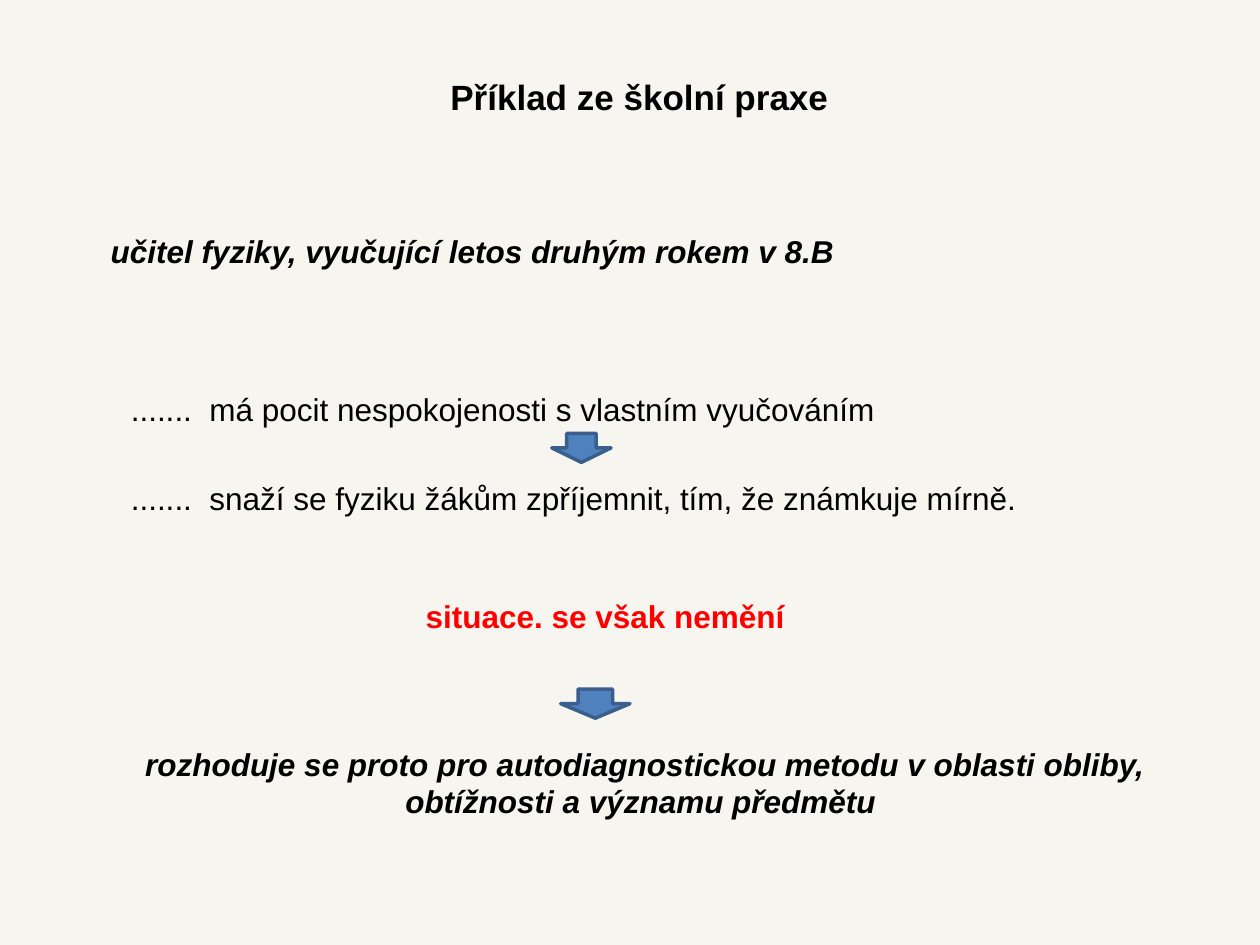
from dataclasses import dataclass

from pptx import Presentation
from pptx.dml.color import RGBColor
from pptx.enum.shapes import MSO_SHAPE
from pptx.enum.text import MSO_ANCHOR, PP_ALIGN
from pptx.util import Inches, Pt

DOWN_ARROW = MSO_SHAPE.DOWN_ARROW
TOP = MSO_ANCHOR.TOP
LEFT, CENTER = PP_ALIGN.LEFT, PP_ALIGN.CENTER
TITLE_ONLY = 5


@dataclass(frozen=True)
class Theme:
    font: str = "Arial"
    title_size: int = 20
    body_size: int = 18
    outline_width: int = 2
    background: RGBColor = RGBColor.from_string("F6F5EF")
    text: RGBColor = RGBColor.from_string("000000")
    warning: RGBColor = RGBColor.from_string("FF0000")
    arrow: RGBColor = RGBColor.from_string("4F81BD")
    outline: RGBColor = RGBColor.from_string("3A5F8C")


THEME = Theme()


def place(shape, box):
    shape.left, shape.top, shape.width, shape.height = map(Inches, box)


def write_text(shape, text, size=THEME.body_size, color=THEME.text,
               bold=False, italic=False, align=LEFT, wrap=True):
    frame = shape.text_frame
    frame.word_wrap = wrap
    frame.vertical_anchor = TOP
    paragraph = frame.paragraphs[0]
    paragraph.alignment = align
    run = paragraph.add_run()
    run.text = text
    run.font.name = THEME.font
    run.font.size = Pt(size)
    run.font.color.rgb = color
    run.font.bold = bold
    run.font.italic = italic


def add_title(slide, box, text):
    title = slide.shapes.title
    place(title, box)
    write_text(title, text, size=THEME.title_size, bold=True, align=CENTER)


def add_statement(slide, box, text, **style):
    shape = slide.shapes.add_textbox(*map(Inches, box))
    write_text(shape, text, **style)


def add_arrow(slide, box):
    arrow = slide.shapes.add_shape(DOWN_ARROW, *map(Inches, box))
    arrow.shadow.inherit = False
    arrow.fill.solid()
    arrow.fill.fore_color.rgb = THEME.arrow
    arrow.line.color.rgb = THEME.outline
    arrow.line.width = Pt(THEME.outline_width)


def add_teacher_steps(slide, box):
    left, top, width, height = box
    steps = (
        ".......  má pocit nespokojenosti s vlastním vyučováním",
        ".......  snaží se fyziku žákům zpříjemnit, tím, že známkuje mírně.",
    )
    line_height = 0.4
    pitch = height - line_height
    for index, step in enumerate(steps):
        add_statement(slide, (left, top + index * pitch, width, line_height), step)
    add_arrow(slide, (left + 3.44, top + 0.39, 0.47, 0.23))


def add_outcome(slide, box):
    left, top, width, height = box
    add_statement(slide, (left + 2.26, top, 3.15, 0.4), "situace. se však nemění",
                  color=THEME.warning, bold=True, wrap=False)
    add_arrow(slide, (left + 3.43, top + 0.78, 0.55, 0.23))
    decision_height = 0.71
    add_statement(
        slide, (left, top + height - decision_height, width, decision_height),
        "rozhoduje se proto pro autodiagnostickou metodu v oblasti obliby, "
        "obtížnosti a významu předmětu ",
        bold=True, italic=True, align=CENTER)


def build_slide(presentation):
    slide = presentation.slides.add_slide(presentation.slide_layouts[TITLE_ONLY])
    slide.background.fill.solid()
    slide.background.fill.fore_color.rgb = THEME.background
    add_title(slide, (0.78, 0.55, 8.59, 0.44), "Příklad ze školní praxe")
    add_statement(slide, (0.78, 1.79, 8.59, 0.4),
                  "učitel fyziky, vyučující letos druhým rokem v 8.B",
                  bold=True, italic=True)
    add_teacher_steps(slide, (0.94, 3.05, 8.67, 1.1))
    add_outcome(slide, (1.02, 4.69, 8.2, 1.88))


def main():
    presentation = Presentation()
    presentation.slide_width = Inches(10)
    presentation.slide_height = Inches(7.5)
    build_slide(presentation)
    presentation.save("out.pptx")


if __name__ == "__main__":
    main()
